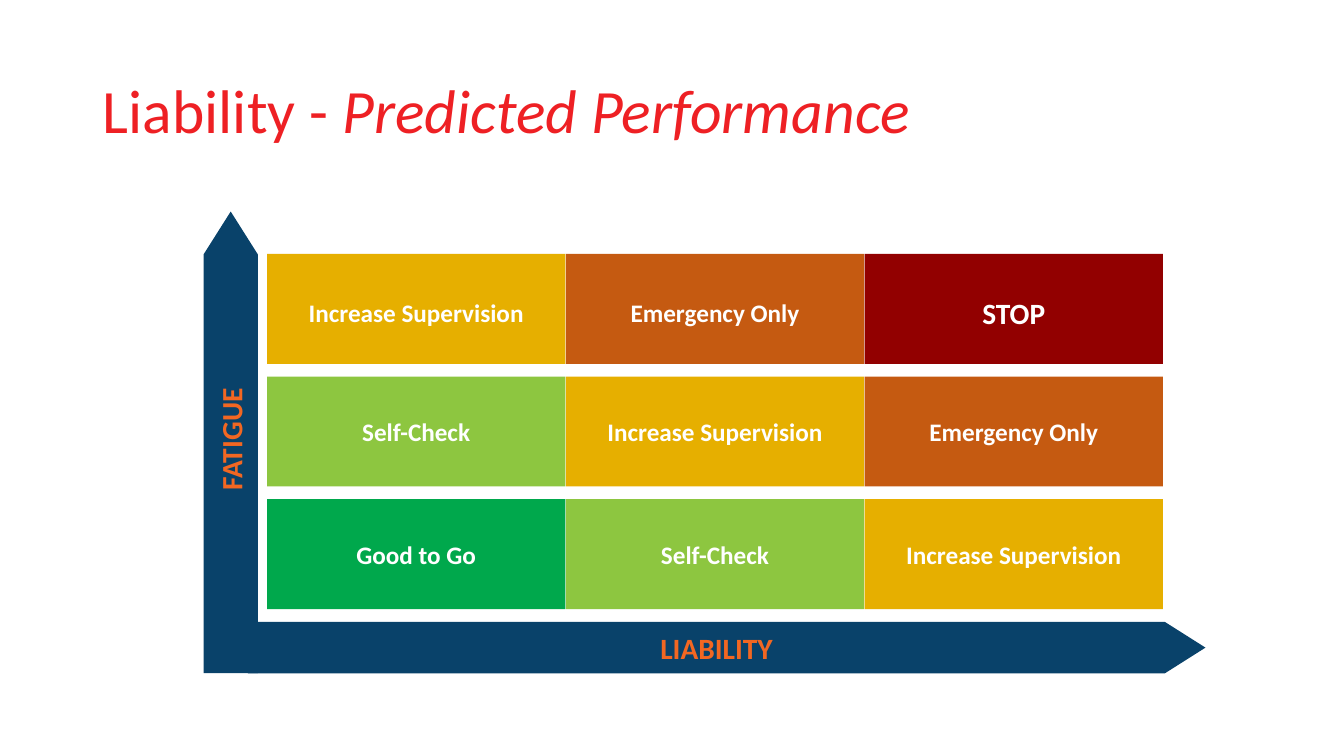
from pptx import Presentation
from pptx.dml.color import RGBColor
from pptx.enum import shapes, text
from pptx.util import Cm, Pt

RED = RGBColor(0xEE, 0x20, 0x24)
NAVY = RGBColor(0x09, 0x42, 0x6A)
ORANGE = RGBColor(0xF2, 0x67, 0x22)
WHITE = RGBColor(0xFF, 0xFF, 0xFF)
GREEN = RGBColor(0x00, 0xA8, 0x4C)
LIME = RGBColor(0x8D, 0xC6, 0x40)
AMBER = RGBColor(0xE6, 0xAF, 0x00)
RUST = RGBColor(0xC5, 0x5A, 0x11)
MAROON = RGBColor(0x92, 0x00, 0x00)
FONT = "Calibri"

TITLE = [("Liability - ", False), ("Predicted Performance", True)]

# Levels of risk, from low to high: label, fill, text size
LEVELS = [
    ("Good to Go", GREEN, 18),
    ("Self-Check", LIME, 18),
    ("Increase Supervision", AMBER, 18),
    ("Emergency Only", RUST, 18),
    ("STOP", MAROON, 21),
]

# Axes: label, left, top, width, height, rotation, left inset of the label
AXES = [
    ("LIABILITY", 6.25, 15.67, 24.13, 1.3, 0, 0),
    ("FATIGUE", 0, 10.46, 11.63, 1.37, 270, 0.69),
]

SIDE = 3
LEFT, TOP = 6.73, 6.4
WIDE, HIGH = 7.52, 2.77
STEP_X, STEP_Y = 7.53, 3.09


def add_block(slide, kind, box, label, fill, size, color):
    """Add a filled shape with a bold centred label; box is in cm."""
    block = slide.shapes.add_shape(kind, *map(Cm, box))
    block.shadow.inherit = False
    block.fill.solid()
    block.fill.fore_color.rgb = fill
    block.line.fill.background()
    frame = block.text_frame
    frame.text = label
    frame.word_wrap = True
    frame.vertical_anchor = text.MSO_ANCHOR.MIDDLE
    frame.margin_left = frame.margin_right = 0
    frame.margin_top = frame.margin_bottom = 0
    para = frame.paragraphs[0]
    para.alignment = text.PP_ALIGN.CENTER
    font = para.runs[0].font
    font.name, font.size, font.bold = FONT, Pt(size), True
    font.color.rgb = color
    return block


def add_title(slide):
    title = slide.shapes.title
    title.left, title.top = Cm(2.34), Cm(1.02)
    title.width, title.height = Cm(29.21), Cm(3.68)
    title.text_frame.vertical_anchor = text.MSO_ANCHOR.MIDDLE
    para = title.text_frame.paragraphs[0]
    para.alignment = text.PP_ALIGN.LEFT
    para.line_spacing = 0.9
    for words, slant in TITLE:
        run = para.add_run()
        run.text = words
        run.font.name, run.font.size = FONT, Pt(44)
        run.font.italic = slant
        run.font.color.rgb = RED


def add_axes(slide):
    for label, left, top, width, height, turn, inset in AXES:
        axis = add_block(slide, shapes.MSO_SHAPE.PENTAGON,
                         (left, top, width, height), label, NAVY, 21, ORANGE)
        axis.adjustments[0] = 0.79
        axis.rotation = turn
        axis.text_frame.margin_left = Cm(inset)


def add_grid(slide):
    """Risk rises by one level with each step right or up."""
    for row in range(SIDE):
        for col in range(SIDE):
            label, fill, size = LEVELS[col + SIDE - 1 - row]
            box = (LEFT + col * STEP_X, TOP + row * STEP_Y, WIDE, HIGH)
            cell = add_block(slide, shapes.MSO_SHAPE.RECTANGLE, box,
                             label, fill, size, WHITE)
            if row == 0:
                cell.text_frame.margin_top = Cm(0.18)


def main():
    deck = Presentation()
    deck.slide_width, deck.slide_height = Cm(33.87), Cm(19.05)
    slide = deck.slides.add_slide(deck.slide_layouts[5])
    add_title(slide)
    add_axes(slide)
    add_grid(slide)
    deck.save("out.pptx")


if __name__ == "__main__":
    main()
